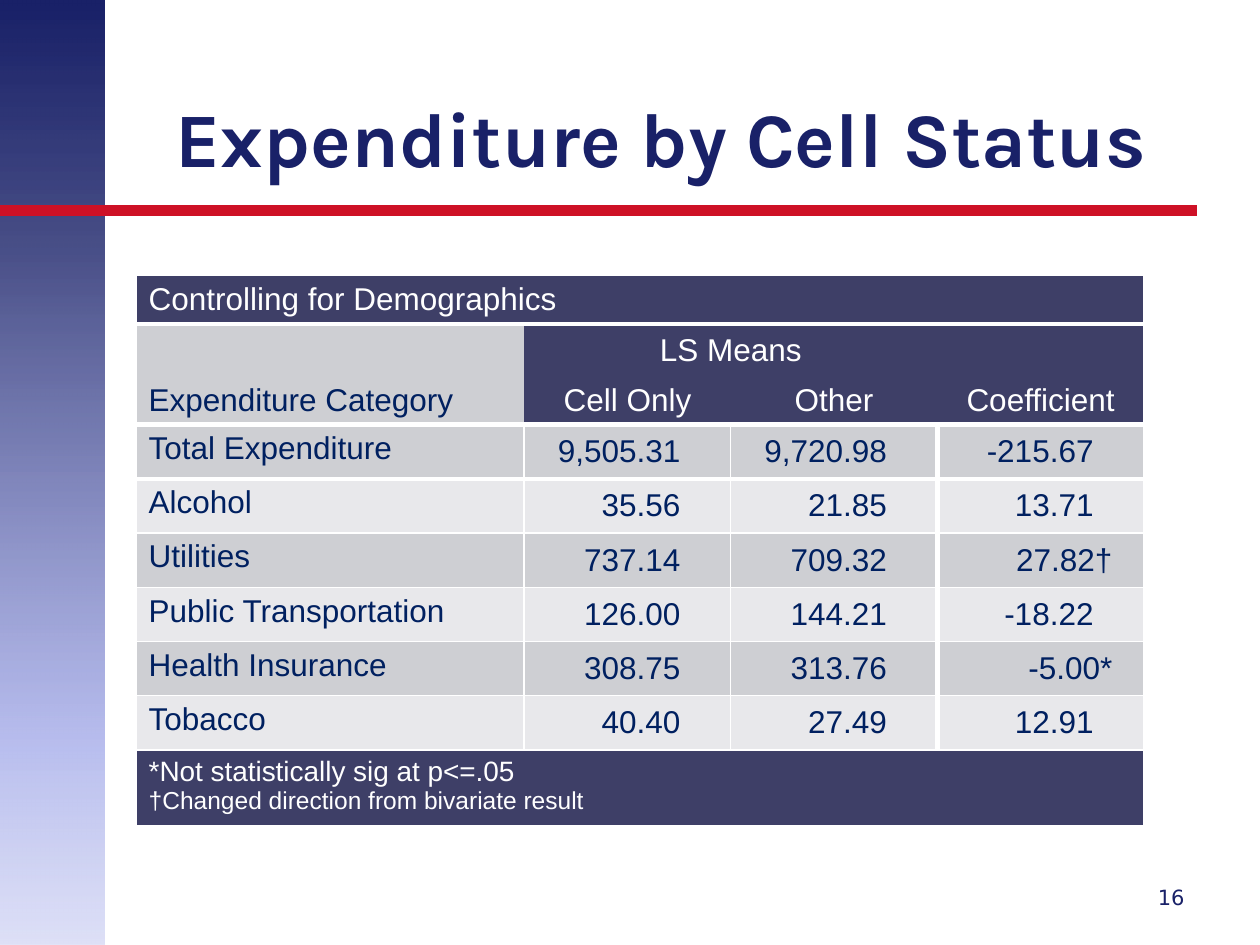
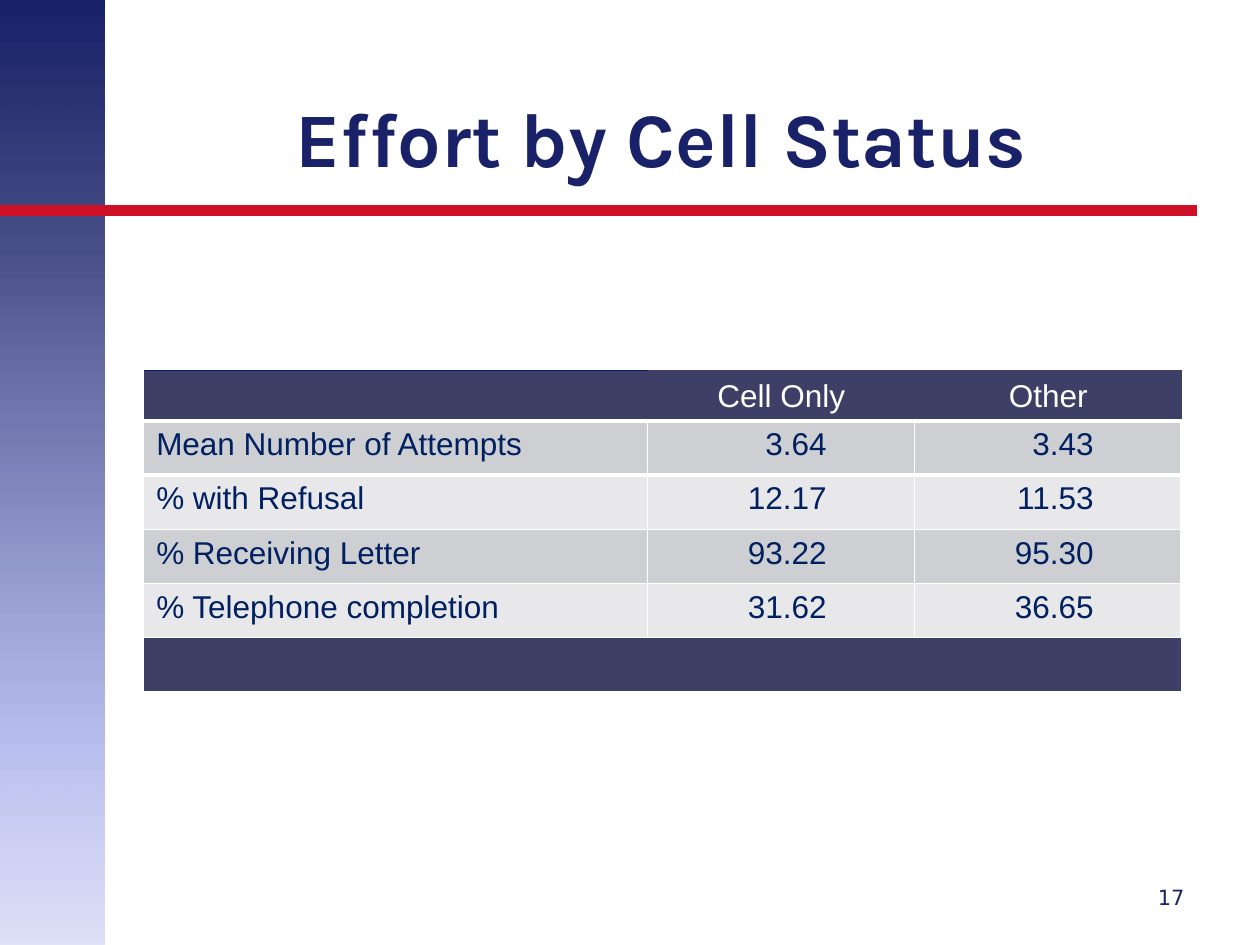
from lxml import etree
from pptx import Presentation
from pptx.dml.color import RGBColor
from pptx.enum.shapes import MSO_CONNECTOR, MSO_SHAPE
from pptx.enum.text import MSO_ANCHOR, PP_ALIGN
from pptx.oxml import parse_xml
from pptx.oxml.ns import nsdecls, qn
from pptx.util import Inches, Pt

NAVY, RED, WHITE = "192168", "CE1126", "FFFFFF"
INK, DARK = "002060", "3E3F67"
BANDS = ("CECFD3", "E8E8EB")
# position, colour, opacity (all in percent)
FADE = ((0, NAVY, 100), (26, NAVY, 79), (78, "969EE6", 68), (100, "CACEF2", 61))
HEAD_H, ROW_H = 0.37, 0.43

LEFT, MID, RIGHT = PP_ALIGN.LEFT, PP_ALIGN.CENTER, PP_ALIGN.RIGHT
TOP, CENTER, LOW = MSO_ANCHOR.TOP, MSO_ANCHOR.MIDDLE, MSO_ANCHOR.BOTTOM


def color(code):
    return RGBColor.from_string(code)


def text(frame, words, size=18, font="Arial", ink=INK, bold=False,
         align=LEFT, more=False):
    """Write one paragraph; more=True adds it below those already there."""
    para = frame.add_paragraph() if more else frame.paragraphs[0]
    para.alignment = align
    run = para.add_run()
    run.text = words
    run.font.size, run.font.name, run.font.bold = Pt(size), font, bold
    run.font.color.rgb = color(ink)


def label(slide, box, words, anchor, **form):
    frame = slide.shapes.add_textbox(*map(Inches, box)).text_frame
    frame.word_wrap = True
    frame.vertical_anchor = anchor
    text(frame, words, **form)


def side(slide, x, y, w, h):
    """Draw the fading band at the left edge."""
    band = slide.shapes.add_shape(MSO_SHAPE.RECTANGLE, *map(Inches, (x, y, w, h)))
    band.shadow.inherit = False
    band.line.fill.background()
    band.fill.gradient()
    band.fill.gradient_angle = 270
    stops = band.fill._fill._gradFill.find(qn("a:gsLst"))
    for stop in list(stops):
        stops.remove(stop)
    for pos, code, alpha in FADE:
        stops.append(parse_xml(
            f'<a:gs {nsdecls("a")} pos="{pos * 1000}"><a:srgbClr val="{code}">'
            f'<a:alpha val="{alpha * 1000}"/></a:srgbClr></a:gs>'))


def rule(slide, x, y, w):
    line = slide.shapes.add_connector(
        MSO_CONNECTOR.STRAIGHT, *map(Inches, (x, y, x + w, y)))
    line.line.color.rgb = color(RED)
    line.line.width = Pt(6)
    etree.SubElement(line._element.spPr, qn("a:effectLst"))


def page(deck, title, num):
    """Add a slide with the parts that all slides share."""
    slide = deck.slides.add_slide(deck.slide_layouts[6])
    side(slide, 0, 0, 0.83, 7.5)
    rule(slide, 0, 1.67, 9.5)
    label(slide, (1, 0.3, 8.5, 1.2), title, LOW, size=44, font="Karla",
          ink=NAVY, bold=True, align=MID)
    label(slide, (8.75, 6.92, 0.75, 0.4), str(num), CENTER, size=12,
          font="DejaVu Sans", ink=NAVY, align=RIGHT)
    return slide


def grid(slide, x, y, cols, rows):
    """Add a plain table with the given column widths and row heights."""
    table = slide.shapes.add_table(
        len(rows), len(cols),
        *map(Inches, (x, y, sum(cols), sum(rows)))).table
    table.first_row = table.horz_banding = False
    for col, wide in zip(table.columns, cols):
        col.width = Inches(wide)
    for row, high in zip(table.rows, rows):
        row.height = Inches(high)
    return table


def style(cell, fill, anchor=TOP, edges=(1, 1, 1, 1), top=WHITE):
    """Set fill, anchor and edge widths (left, right, top, bottom; 0 is none)."""
    props = cell._tc.get_or_add_tcPr()
    for name, width in zip("LRTB", edges):
        code = top if name == "T" else WHITE
        paint = (f'<a:solidFill><a:srgbClr val="{code}"/></a:solidFill>'
                 if width else "<a:noFill/>")
        props.append(parse_xml(
            f'<a:ln{name} {nsdecls("a")} w="{Pt(width)}">{paint}</a:ln{name}>'))
    cell.fill.solid()
    cell.fill.fore_color.rgb = color(fill)
    cell.vertical_anchor = anchor


def span(table, row, col, last_row, last_col):
    table.cell(row, col).merge(table.cell(last_row, last_col))


def head(cell, words, edges, **form):
    style(cell, DARK, LOW, edges, **form)
    if words:
        text(cell.text_frame, words, ink=WHITE, align=MID)


def body(table, start, data, pad, anchor, thick):
    """Fill banded data rows; column `thick` has a heavy right edge."""
    for i, line in enumerate(data):
        for j, words in enumerate(line):
            cell = table.cell(start + i, j)
            edges = (3 if j == thick + 1 else 1, 3 if j == thick else 1,
                     3 if i < 2 else 1, 3 if i == 0 else 1)
            style(cell, BANDS[i % 2], anchor if j else TOP, edges)
            if j:
                cell.margin_left = 0
                # A trailing mark hangs outside the number column
                cell.margin_right = Inches(0.25 if words[-1] in "†*" else pad)
            text(cell.text_frame, words, align=RIGHT if j else LEFT)


def bar(table, row, edges=(1, 1, 1, 1)):
    """Make a dark row that spans the table, and return its cell."""
    count = len(table.columns)
    for j in range(count):
        style(table.cell(row, j), DARK, LOW if row == 0 else TOP, edges)
    span(table, row, 0, row, count - 1)
    return table.cell(row, 0)


def spend(slide, x, y):
    data = (
        ("Total Expenditure", "9,505.31", "9,720.98", "-215.67"),
        ("Alcohol", "35.56", "21.85", "13.71"),
        ("Utilities", "737.14", "709.32", "27.82†"),
        ("Public Transportation", "126.00", "144.21", "-18.22"),
        ("Health Insurance", "308.75", "313.76", "-5.00*"),
        ("Tobacco", "40.40", "27.49", "12.91"),
    )
    table = grid(slide, x, y, [3.08] + [1.64] * 3, [HEAD_H] * 3 + [ROW_H] * 7)
    text(bar(table, 0, (1, 1, 3, 3)).text_frame, "Controlling for Demographics",
         ink=WHITE)
    for row in (1, 2):
        style(table.cell(row, 0), BANDS[0], LOW, (1, 0, 3, 3))
    text(table.cell(1, 0).text_frame, "Expenditure Category")
    head(table.cell(1, 1), "LS Means", (0, 0, 3, 0))
    head(table.cell(1, 2), "", (0, 0, 3, 0))
    head(table.cell(1, 3), "Coefficient", (0, 1, 3, 3))
    head(table.cell(2, 1), "Cell Only", (0, 0, 0, 3))
    head(table.cell(2, 2), "Other", (0, 0, 0, 3))
    head(table.cell(2, 3), "", (0, 1, 3, 3))
    span(table, 1, 0, 2, 0)
    span(table, 1, 1, 1, 2)
    span(table, 1, 3, 2, 3)
    body(table, 3, data, 0.4, CENTER, thick=2)
    notes = bar(table, 9).text_frame
    text(notes, "*Not statistically sig at p<=.05", size=16, ink=WHITE)
    text(notes, "†Changed direction from bivariate result", size=14, ink=WHITE,
         more=True)


def effort(slide, x, y):
    data = (
        ("Mean Number of Attempts", "3.64", "3.43"),
        ("% with Refusal", "12.17", "11.53"),
        ("% Receiving Letter", "93.22", "95.30"),
        ("% Telephone completion", "31.62", "36.65"),
    )
    table = grid(slide, x, y, [4, 2.12, 2.12], [HEAD_H] + [ROW_H] * 5)
    head(table.cell(0, 0), "", (1, 0, 1, 3), top=INK)
    head(table.cell(0, 1), "Cell Only", (0, 0, 0, 3))
    head(table.cell(0, 2), "Other", (0, 0, 0, 3))
    body(table, 1, data, 0.7, TOP, thick=2)
    bar(table, 5)


def main():
    deck = Presentation()
    deck.slide_width, deck.slide_height = Inches(10), Inches(7.5)
    spend(page(deck, "Expenditure by Cell Status", 16), 1.08, 2.17)
    effort(page(deck, "Effort by Cell Status", 17), 1.14, 2.94)
    deck.save("out.pptx")


if __name__ == "__main__":
    main()
